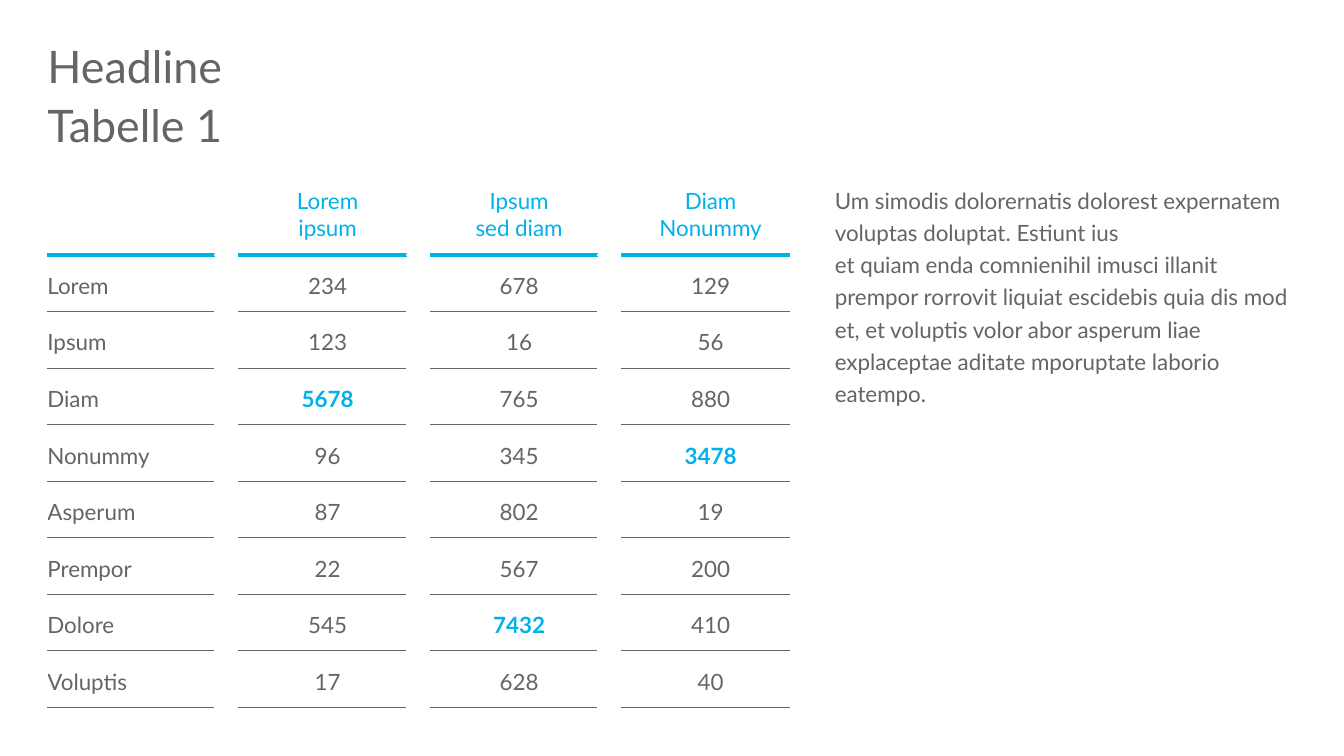
"""Build a slide with a headline, a four-column figure table and a text block."""
from lxml.etree import SubElement
from pptx import Presentation
from pptx.dml.color import RGBColor
from pptx.enum.text import MSO_ANCHOR, MSO_AUTO_SIZE, PP_ALIGN
from pptx.oxml import parse_xml
from pptx.oxml.ns import nsdecls, qn
from pptx.util import Inches, Pt

GREY = RGBColor(0x63, 0x65, 0x66)
CYAN = RGBColor(0x00, 0xB1, 0xEB)
WHITE = RGBColor(0xFF, 0xFF, 0xFF)

HEADERS = ["", "Lorem\nipsum", "Ipsum\nsed diam", "Diam\nNonummy"]
ROWS = [
    ["Lorem", "234", "678", "129"],
    ["Ipsum", "123", "16", "56"],
    ["Diam", "5678", "765", "880"],
    ["Nonummy", "96", "345", "3478"],
    ["Asperum", "87", "802", "19"],
    ["Prempor", "22", "567", "200"],
    ["Dolore", "545", "7432", "410"],
    ["Voluptis", "17", "628", "40"],
]
HIGHLIGHTS = {"5678", "3478", "7432"}
TABLE_HEIGHT, HEADER_HEIGHT = 5.16, 0.67
COLUMN_WIDTH, GAP_WIDTH = 1.66, 0.23
STORY = (
    "Um simodis dolorernatis dolorest expernatem voluptas doluptat. Estiunt ius \v"
    "et quiam enda comnienihil imusci illanit prempor rorrovit liquiat escidebis "
    "quia dis mod et, et voluptis volor abor asperum liae explaceptae aditate "
    "mporuptate laborio eatempo."
)


def write_block(box, text, left, top, width, height, size, line_spacing):
    box.left, box.top = Inches(left), Inches(top)
    box.width, box.height = Inches(width), Inches(height)
    frame = box.text_frame
    frame.margin_left = frame.margin_top = frame.margin_right = frame.margin_bottom = 0
    frame.word_wrap = True
    frame.auto_size = MSO_AUTO_SIZE.NONE
    frame.vertical_anchor = MSO_ANCHOR.TOP
    frame.text = text
    para = frame.paragraphs[0]
    properties = para._p.get_or_add_pPr()
    properties.set("marL", "0")
    properties.set("indent", "0")
    SubElement(properties, qn("a:buNone"))
    para.alignment = PP_ALIGN.LEFT
    para.line_spacing = line_spacing
    para.space_before = Pt(0)
    para.font.name, para.font.size = "Lato", Pt(size)
    para.font.color.rgb = GREY


def add_border(cell, side, color, width):
    line = parse_xml(
        f'<a:{side} {nsdecls("a")} w="{Pt(width)}"><a:solidFill>'
        f'<a:srgbClr val="{color}"/></a:solidFill></a:{side}>'
    )
    properties = cell._tc.get_or_add_tcPr()
    properties.insert(len(properties.findall(qn("a:lnT"))), line)


deck = Presentation()
deck.slide_width, deck.slide_height = Inches(13.33), Inches(7.5)
page = deck.slides.add_slide(deck.slide_layouts[1])

write_block(page.shapes.title, "Headline", 0.47, 0.44, 12.39, 0.51, 32, 0.9)
write_block(page.placeholders[1], "Tabelle 1", 0.47, 0.97, 12.39, 0.51, 32, 1.0)

table = page.shapes.add_table(
    len(ROWS) + 1, 2 * len(HEADERS) - 1,
    Inches(0.47), Inches(1.86), Inches(7.34), Inches(TABLE_HEIGHT),
).table
table.first_row = table.horz_banding = False
for index, column in enumerate(table.columns):
    column.width = Inches(GAP_WIDTH if index % 2 else COLUMN_WIDTH)
for index, row in enumerate(table.rows):
    body_height = (TABLE_HEIGHT - HEADER_HEIGHT) / len(ROWS)
    row.height = Inches(body_height if index else HEADER_HEIGHT)
for cell in table.iter_cells():
    cell.fill.solid()
    cell.fill.fore_color.rgb = WHITE

for row_index, texts in enumerate([HEADERS] + ROWS):
    for column_index, text in enumerate(texts):
        cell = table.cell(row_index, 2 * column_index)
        is_header = row_index == 0
        cell.margin_left = Inches(0.1 if column_index else 0)
        cell.margin_top = Inches(0 if is_header else 0.05)
        cell.margin_right = cell.margin_bottom = 0
        cell.vertical_anchor = MSO_ANCHOR.TOP if is_header else MSO_ANCHOR.MIDDLE
        cell.text = text
        for para in cell.text_frame.paragraphs:
            para.alignment = PP_ALIGN.CENTER if column_index else PP_ALIGN.LEFT
            para.font.name, para.font.size = "Lato", Pt(16)
            para.font.bold = text in HIGHLIGHTS
            para.font.color.rgb = CYAN if is_header or text in HIGHLIGHTS else GREY
        if not is_header:
            top_rule = (CYAN, 3) if row_index == 1 else (GREY, 0.75)
            add_border(cell, "lnT", *top_rule)
        bottom_rule = (CYAN, 3) if is_header else (GREY, 0.75)
        add_border(cell, "lnB", *bottom_rule)

story_box = page.shapes.add_textbox(0, 0, 0, 0)
write_block(story_box, STORY, 8.28, 1.8, 4.58, 3, 16, 1.2)

deck.save("out.pptx")
